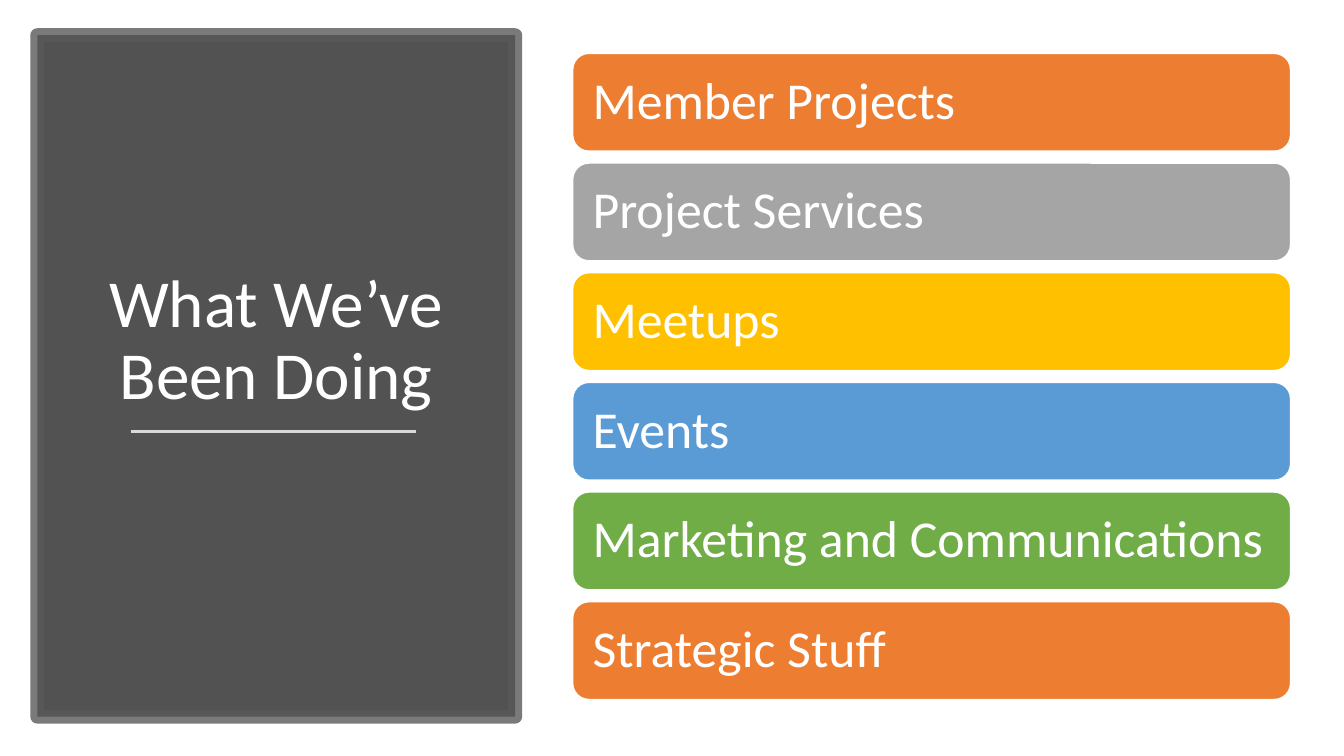
from lxml import etree
from pptx import Presentation
from pptx import util as u
from pptx.dml.color import RGBColor
from pptx.enum import shapes, text
from pptx.oxml import ns

COLORS = {
    "white": "FFFFFF", "panel": "404040", "frame": "595959", "rule": "D9D9D9",
    "orange": "ED7D31", "gray": "A5A5A5", "gold": "FFC000",
    "blue": "5B9BD5", "green": "70AD47",
}
TOPICS = [
    ("Member Projects", "orange"),
    ("Project Services", "gray"),
    ("Meetups", "gold"),
    ("Events", "blue"),
    ("Marketing and Communications", "green"),
    ("Strategic Stuff", "orange"),
]
BAR_LEFT, BAR_TOP, BAR_WIDTH, BAR_HEIGHT = 5.68, 0.53, 7.12, 0.97
ROW_STEP = 1.088


def paint(color_format, name, opacity=100):
    """Fill or line colour by name, with opacity in percent."""
    color_format.solid()
    color_format.fore_color.rgb = RGBColor.from_string(COLORS[name])
    if opacity < 100:
        color = color_format._xPr.find(f".//{ns.qn('a:srgbClr')}")
        etree.SubElement(color, ns.qn("a:alpha"), val=str(opacity * 1000))


def write(frame, words, size, align):
    frame.word_wrap = True
    para = frame.paragraphs[0]
    para.text = words
    para.alignment = align
    para.line_spacing = 0.9
    para.font.name = "Calibri"
    para.font.size = u.Pt(size)
    para.font.color.rgb = RGBColor.from_string(COLORS["white"])


deck = Presentation()
deck.slide_width, deck.slide_height = u.Inches(13.33), u.Inches(7.5)
page = deck.slides.add_slide(deck.slide_layouts[6])

# Title panel
panel = page.shapes.add_shape(
    shapes.MSO_SHAPE.RECTANGLE,
    u.Inches(0.37), u.Inches(0.35), u.Inches(4.74), u.Inches(6.76))
panel.shadow.inherit = False
paint(panel.fill, "panel", 90)
paint(panel.line.fill, "frame", 80)
panel.line.width = u.Pt(10)

title = page.shapes.add_textbox(u.Inches(0.74), u.Inches(1), u.Inches(4), u.Inches(3.16))
title.text_frame.vertical_anchor = text.MSO_ANCHOR.BOTTOM
write(title.text_frame, "What We’ve Been Doing", 48, text.PP_ALIGN.CENTER)

rule = page.shapes.add_connector(
    shapes.MSO_CONNECTOR.STRAIGHT,
    u.Inches(1.3), u.Inches(4.28), u.Inches(4.13), u.Inches(4.28))
paint(rule.line.fill, "rule")
rule.line.width = u.Pt(1.75)
etree.SubElement(rule._element.spPr, ns.qn("a:effectLst"))

# Topic bars
for row, (topic, color) in enumerate(TOPICS):
    bar = page.shapes.add_shape(
        shapes.MSO_SHAPE.ROUNDED_RECTANGLE,
        u.Inches(BAR_LEFT), u.Inches(BAR_TOP + row * ROW_STEP),
        u.Inches(BAR_WIDTH), u.Inches(BAR_HEIGHT))
    bar.shadow.inherit = False
    paint(bar.fill, color)
    paint(bar.line.fill, "white")
    bar.line.width = u.Pt(1)
    frame = bar.text_frame
    frame.margin_left = frame.margin_right = u.Inches(0.15)
    frame.margin_top = frame.margin_bottom = u.Inches(0.15)
    frame.vertical_anchor = text.MSO_ANCHOR.MIDDLE
    write(frame, topic, 37, text.PP_ALIGN.LEFT)

deck.save("out.pptx")
